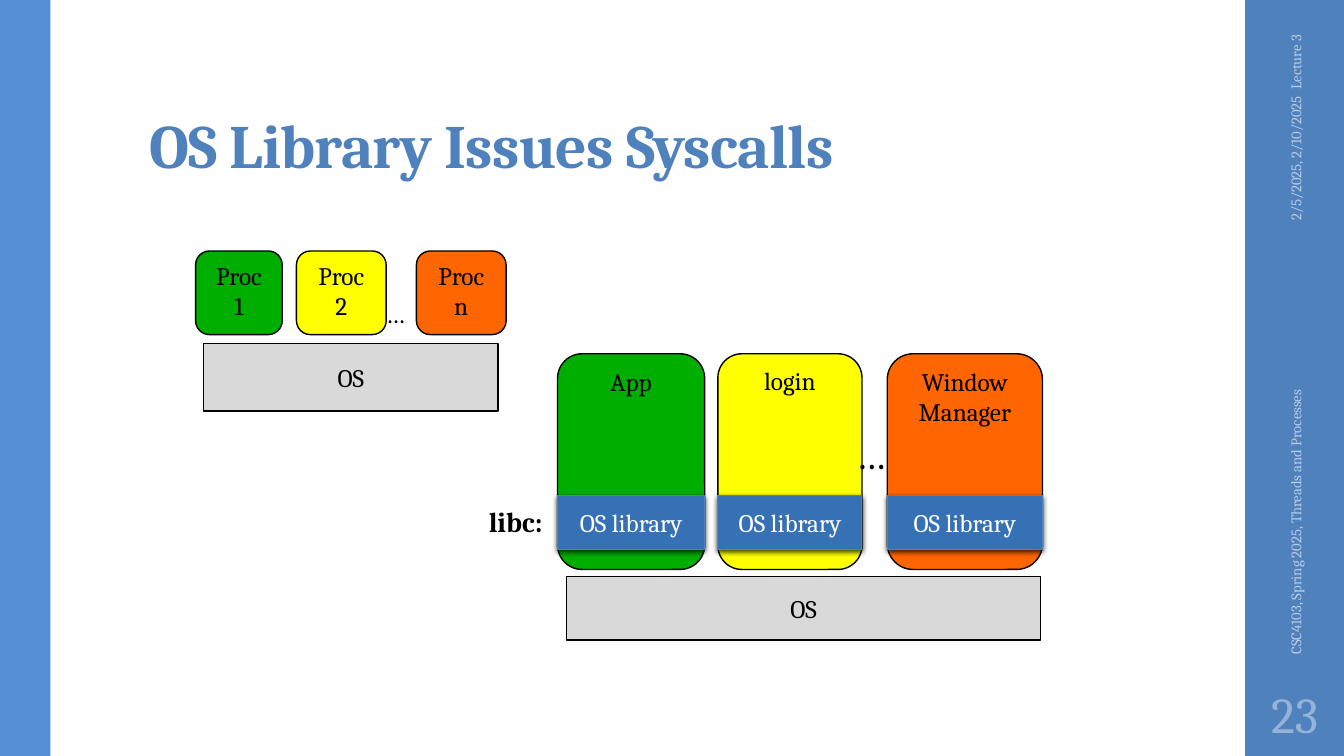
from dataclasses import dataclass
from typing import Any, Optional

from lxml.etree import SubElement
from pptx import Presentation
from pptx.dml.color import RGBColor
from pptx.enum.shapes import MSO_SHAPE
from pptx.enum.text import MSO_ANCHOR, MSO_AUTO_SIZE, PP_ALIGN
from pptx.oxml.ns import qn
from pptx.util import Emu, Pt

PX = 9144
FONT = "Cambria"

BLACK = RGBColor(0x00, 0x00, 0x00)
WHITE = RGBColor(0xFF, 0xFF, 0xFF)
BLUE = RGBColor(0x4F, 0x81, 0xBD)
LEFT_BLUE = RGBColor(0x55, 0x8E, 0xD5)
LIBRARY_BLUE = RGBColor(0x37, 0x71, 0xB5)
FOOTER_BLUE = RGBColor(0xB9, 0xCD, 0xE5)
NUMBER_BLUE = RGBColor(0x95, 0xB3, 0xD7)
GREY = RGBColor(0xD9, 0xD9, 0xD9)
GREEN = RGBColor(0x00, 0xAE, 0x00)
YELLOW = RGBColor(0xFF, 0xFF, 0x00)
ORANGE = RGBColor(0xFF, 0x66, 0x00)


@dataclass(frozen=True)
class Box:
    left: int
    top: int
    width: int
    height: int

    def emu(self) -> tuple[Emu, ...]:
        return tuple(Emu(v * PX) for v in (self.left, self.top, self.width, self.height))


@dataclass(frozen=True)
class Block:
    box: Box
    fill: RGBColor
    text: str = ""
    kind: MSO_SHAPE = MSO_SHAPE.RECTANGLE
    anchor: MSO_ANCHOR = MSO_ANCHOR.MIDDLE
    color: RGBColor = BLACK
    line: Optional[RGBColor] = BLACK
    line_width: float = 1
    shadow: bool = False


@dataclass(frozen=True)
class Label:
    box: Box
    text: str
    size: float
    color: RGBColor = BLACK
    align: PP_ALIGN = PP_ALIGN.LEFT
    anchor: MSO_ANCHOR = MSO_ANCHOR.TOP
    bold: bool = False
    wrap: bool = True
    rotation: int = 0
    side_margin: int = 10


@dataclass(frozen=True)
class Program:
    text: str
    left: int
    width: int
    fill: RGBColor


def apply(target: Any, values: dict[str, Any]) -> None:
    for name, value in values.items():
        setattr(target, name, value)


def write(shape: Any, text: str, size: float, color: RGBColor, align: PP_ALIGN,
          bold: bool = False) -> Any:
    paragraph = shape.text_frame.paragraphs[0]
    paragraph.alignment = align
    run = paragraph.add_run()
    run.text = text
    apply(run.font, {"name": FONT, "size": Pt(size), "bold": bold})
    run.font.color.rgb = color
    return run


def add_shadow(shape: Any) -> None:
    effects = shape._element.spPr.find(qn("a:effectLst"))
    outer = SubElement(effects, qn("a:outerShdw"), blurRad=str(Pt(4)),
                       dist=str(Pt(1.2)), dir="5400000", rotWithShape="0")
    color = SubElement(outer, qn("a:srgbClr"), val=str(BLACK))
    SubElement(color, qn("a:alpha"), val="75000")


def add_block(shapes: Any, block: Block) -> None:
    shape = shapes.add_shape(block.kind, *block.box.emu())
    shape.shadow.inherit = False
    shape.fill.solid()
    shape.fill.fore_color.rgb = block.fill
    if block.line is None:
        shape.line.fill.background()
    else:
        shape.line.color.rgb = block.line
        shape.line.width = Pt(block.line_width)
    if block.shadow:
        add_shadow(shape)
    if block.text:
        apply(shape.text_frame, {"word_wrap": True, "vertical_anchor": block.anchor})
        write(shape, block.text, 18, block.color, PP_ALIGN.CENTER)


def add_label(shapes: Any, label: Label) -> None:
    shape = shapes.add_textbox(*label.box.emu())
    shape.rotation = label.rotation
    margin = Emu(label.side_margin * PX)
    apply(shape.text_frame, {"word_wrap": label.wrap, "vertical_anchor": label.anchor,
                             "margin_left": margin, "margin_right": margin})
    write(shape, label.text, label.size, label.color, label.align, label.bold)


def add_programs(shapes: Any, programs: list[Program], top: int, height: int) -> None:
    for program in programs:
        add_block(shapes, Block(Box(program.left, top, program.width, height), program.fill,
                                program.text, MSO_SHAPE.ROUNDED_RECTANGLE, MSO_ANCHOR.TOP))


def add_title(slide: Any, text: str) -> None:
    title = slide.shapes.title
    left, top, width, height = Box(138, 32, 1060, 153).emu()
    apply(title, {"left": left, "top": top, "width": width, "height": height})
    apply(title.text_frame, {"word_wrap": True, "auto_size": MSO_AUTO_SIZE.NONE,
                             "vertical_anchor": MSO_ANCHOR.BOTTOM,
                             "margin_left": Emu(10 * PX), "margin_right": Emu(10 * PX),
                             "margin_top": Emu(3 * PX), "margin_bottom": Emu(5 * PX)})
    run = write(title, text, 44, BLUE, PP_ALIGN.LEFT, True)
    run.font._element.set("spc", "-50")
    title.text_frame.paragraphs[0].line_spacing = 0.9


def add_process_stack(slide: Any) -> None:
    shapes = slide.shapes.add_group_shape().shapes
    add_block(shapes, Block(Box(202, 341, 292, 67), GREY, "OS"))
    add_programs(shapes, [Program("Proc 1", 194, 86, GREEN),
                          Program("Proc 2", 294, 89, YELLOW),
                          Program("Proc n", 413, 89, ORANGE)], 249, 83)
    add_label(shapes, Label(Box(373, 291, 45, 40), "…", 18, wrap=False))


def add_library_stack(slide: Any) -> None:
    shapes = slide.shapes.add_group_shape().shapes
    programs = [Program("App", 553, 146, GREEN),
                Program("login", 712, 143, YELLOW),
                Program("Window Manager", 880, 154, ORANGE)]
    add_block(shapes, Block(Box(562, 572, 470, 63), GREY, "OS"))
    add_programs(shapes, programs, 351, 214)
    add_label(shapes, Label(Box(839, 422, 65, 57), "…", 28))
    for program in programs:
        add_block(shapes, Block(Box(program.left, 492, program.width, 53), LIBRARY_BLUE,
                                "OS library", color=WHITE, line=BLUE, line_width=0.75,
                                shadow=True))
    add_label(shapes, Label(Box(474, 496, 74, 44), "libc:", 20, align=PP_ALIGN.RIGHT,
                            bold=True, wrap=False))


def main() -> None:
    presentation = Presentation()
    apply(presentation, {"slide_width": Emu(1333 * PX), "slide_height": Emu(750 * PX)})
    slide = presentation.slides.add_slide(presentation.slide_layouts[5])
    for bar in (Block(Box(1235, 0, 98, 750), BLUE, line=None),
                Block(Box(0, 0, 50, 750), LEFT_BLUE, line=None)):
        add_block(slide.shapes, bar)
    add_title(slide, "OS Library Issues Syscalls")
    for label in (
        Label(Box(1181, 109, 208, 40), "2/5/2025, 2/10/2025  Lecture 3", 10.5, FOOTER_BLUE,
              PP_ALIGN.RIGHT, MSO_ANCHOR.MIDDLE, rotation=270),
        Label(Box(1089, 443, 392, 40), "CSC4103, Spring 2025, Threads and Processes", 10.5,
              FOOTER_BLUE, anchor=MSO_ANCHOR.MIDDLE, rotation=270),
        Label(Box(1235, 675, 98, 65), "23", 36, NUMBER_BLUE, PP_ALIGN.CENTER,
              MSO_ANCHOR.MIDDLE, side_margin=5),
    ):
        add_label(slide.shapes, label)
    add_process_stack(slide)
    add_library_stack(slide)
    presentation.save("out.pptx")


if __name__ == "__main__":
    main()
